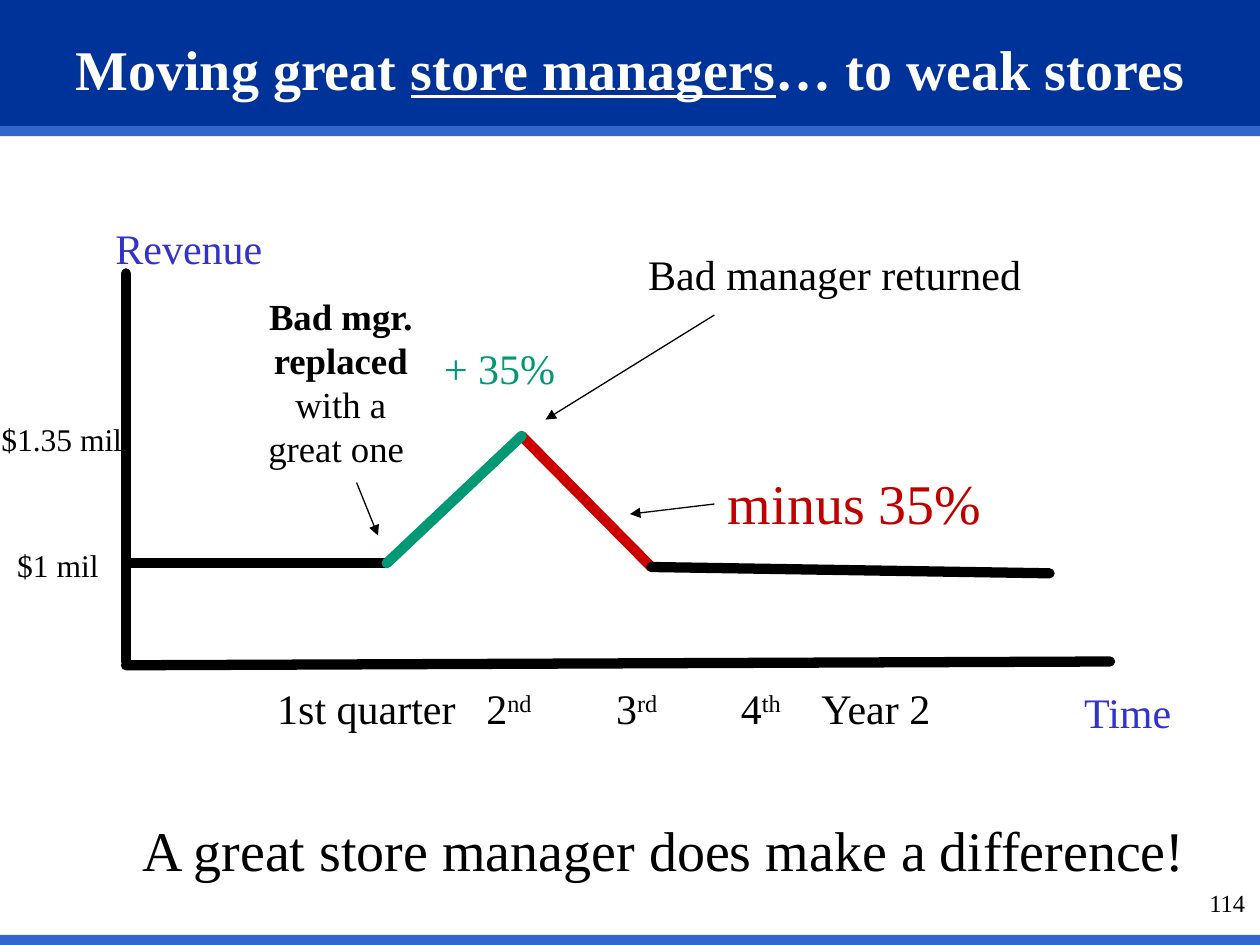
import pptx
import pptx.util
import pptx.dml.color
import pptx.enum.shapes
import pptx.enum.text
import pptx.oxml.ns
from lxml import etree

Inches = pptx.util.Inches
RGBColor = pptx.dml.color.RGBColor
ALIGN = pptx.enum.text.PP_ALIGN
ANCHOR = pptx.enum.text.MSO_ANCHOR
qn = pptx.oxml.ns.qn

NAVY = RGBColor(0x00, 0x33, 0x99)
BLUE = RGBColor(0x33, 0x66, 0xCC)
AXIS_BLUE = RGBColor(0x33, 0x33, 0xCC)
GREEN = RGBColor(0x00, 0x99, 0x73)
RED = RGBColor(0xCC, 0x00, 0x00)
DARK_RED = RGBColor(0xC0, 0x00, 0x00)
BLACK = RGBColor(0x00, 0x00, 0x00)
WHITE = RGBColor(0xFF, 0xFF, 0xFF)

presentation = pptx.Presentation()
presentation.slide_width = Inches(10)
presentation.slide_height = Inches(7.5)
slide = presentation.slides.add_slide(presentation.slide_layouts[5])


def add_run(paragraph, text, size, color=BLACK, bold=False):
    run = paragraph.add_run()
    run.text = text
    run.font.name = "Times New Roman"
    run.font.size = pptx.util.Pt(size)
    run.font.color.rgb = color
    run.font.bold = bold
    return run


def add_label(box, inset=True, wrap=True, align=ALIGN.CENTER):
    """Add an empty text box and return its first paragraph."""
    frame = slide.shapes.add_textbox(*map(Inches, box)).text_frame
    frame.word_wrap = wrap
    if not inset:
        frame.margin_left = frame.margin_right = 0
        frame.margin_top = frame.margin_bottom = 0
    frame.paragraphs[0].alignment = align
    return frame.paragraphs[0]


# Header and footer bands
for top, height, color in [(0, 1, NAVY), (1, 0.08, BLUE), (7.42, 0.08, BLUE)]:
    band = slide.shapes.add_shape(
        pptx.enum.shapes.MSO_SHAPE.RECTANGLE,
        0, Inches(top), Inches(10), Inches(height))
    band.shadow.inherit = False
    band.fill.solid()
    band.fill.fore_color.rgb = color
    band.line.fill.background()

# Title, brought in front of the header band
title = slide.shapes.title
title.left, title.top = Inches(0), Inches(0.33)
title.width, title.height = Inches(10), Inches(0.42)
title.text_frame.auto_size = pptx.enum.text.MSO_AUTO_SIZE.NONE
title.text_frame.vertical_anchor = ANCHOR.MIDDLE
heading = title.text_frame.paragraphs[0]
heading.alignment = ALIGN.CENTER
add_run(heading, "Moving great ", 32, WHITE, True)
add_run(heading, "store managers", 32, WHITE, True).font.underline = True
add_run(heading, "… to weak stores", 32, WHITE, True)
slide.shapes.element.append(title.element)

# Axes, revenue curve and pointers: start, end, colour, is it a pointer
PEAK, DROP_END, RISE_START = (4.14, 3.46), (5.17, 4.5), (3.07, 4.47)
strokes = [
    ((1, 2.17), (1, 5.25), BLACK, False),
    (PEAK, DROP_END, RED, False),
    ((1, 5.28), (8.81, 5.25), BLACK, False),
    ((1.03, 4.47), RISE_START, BLACK, False),
    (PEAK, RISE_START, GREEN, False),
    (DROP_END, (8.33, 4.55), BLACK, False),
    ((2.83, 3.83), (3, 4.25), BLACK, True),
    ((5.67, 2.5), (4.33, 3.33), BLACK, True),
    ((5.67, 4), (5, 4.08), BLACK, True),
]
for start, end, color, is_pointer in strokes:
    stroke = slide.shapes.add_connector(
        pptx.enum.shapes.MSO_CONNECTOR.STRAIGHT, *map(Inches, start + end))
    stroke.line.color.rgb = color
    stroke.line.width = pptx.util.Pt(0.75 if is_pointer else 5.88)
    properties = stroke.element.spPr
    outline = properties.find(qn("a:ln"))
    if is_pointer:
        etree.SubElement(outline, qn("a:tailEnd"), type="triangle")
    else:
        outline.set("cap", "rnd")
    etree.SubElement(properties, qn("a:effectLst"))

# Axis names and revenue levels
for text, box, size, color in [
    ("$1 mil", (0.11, 4.33, 0.7, 0.3), 18, BLACK),
    ("$1.35 mil", (0, 3.33, 0.98, 0.3), 18, BLACK),
    ("Revenue", (0.85, 1.77, 1.3, 0.4), 24, AXIS_BLUE),
    ("Time", (8.55, 5.45, 0.8, 0.4), 24, AXIS_BLUE),
]:
    add_run(add_label(box, inset=False, wrap=False), text, size, color)

# Comments on the curve and the conclusion
for text, box, size, color in [
    ("A great store manager does make a difference!",
     (0.54, 6.42, 9.46, 0.63), 32, BLACK),
    ("Bad manager returned", (3.75, 1.92, 5.75, 0.5), 24, BLACK),
    ("minus 35%", (5.67, 3.67, 2.23, 0.64), 32, DARK_RED),
    ("+ 35%", (3.42, 2.67, 1.09, 0.51), 24, GREEN),
]:
    add_run(add_label(box), text, size, color)

replacement = add_label((2.08, 2.33, 1.25, 1.4), inset=False)
add_run(replacement, "Bad mgr. replaced", 21, bold=True)
add_run(replacement, " with a great one ", 21)

# Quarters along the time axis, each at its own tab stop
quarters = add_label((0.92, 5.42, 7.67, 0.4), inset=False, align=ALIGN.LEFT)
tab_stops = etree.SubElement(
    quarters._p.get_or_add_pPr(), qn("a:tabLst"))
for position, text, ordinal in [
    (1.28, "1st quarter", ""),
    (2.94, "2", "nd"),
    (3.97, "3", "rd"),
    (4.96, "4", "th"),
    (5.6, "Year 2", ""),
]:
    etree.SubElement(
        tab_stops, qn("a:tab"), pos=str(Inches(position)), algn="l")
    add_run(quarters, "\t" + text, 24)
    if ordinal:
        superscript = add_run(quarters, ordinal, 24)
        superscript.font._element.set("baseline", "30000")

page_number = add_label((9.5, 7, 0.5, 0.5), wrap=False, align=ALIGN.LEFT)
add_run(page_number, "114", 14)

presentation.save("out.pptx")
